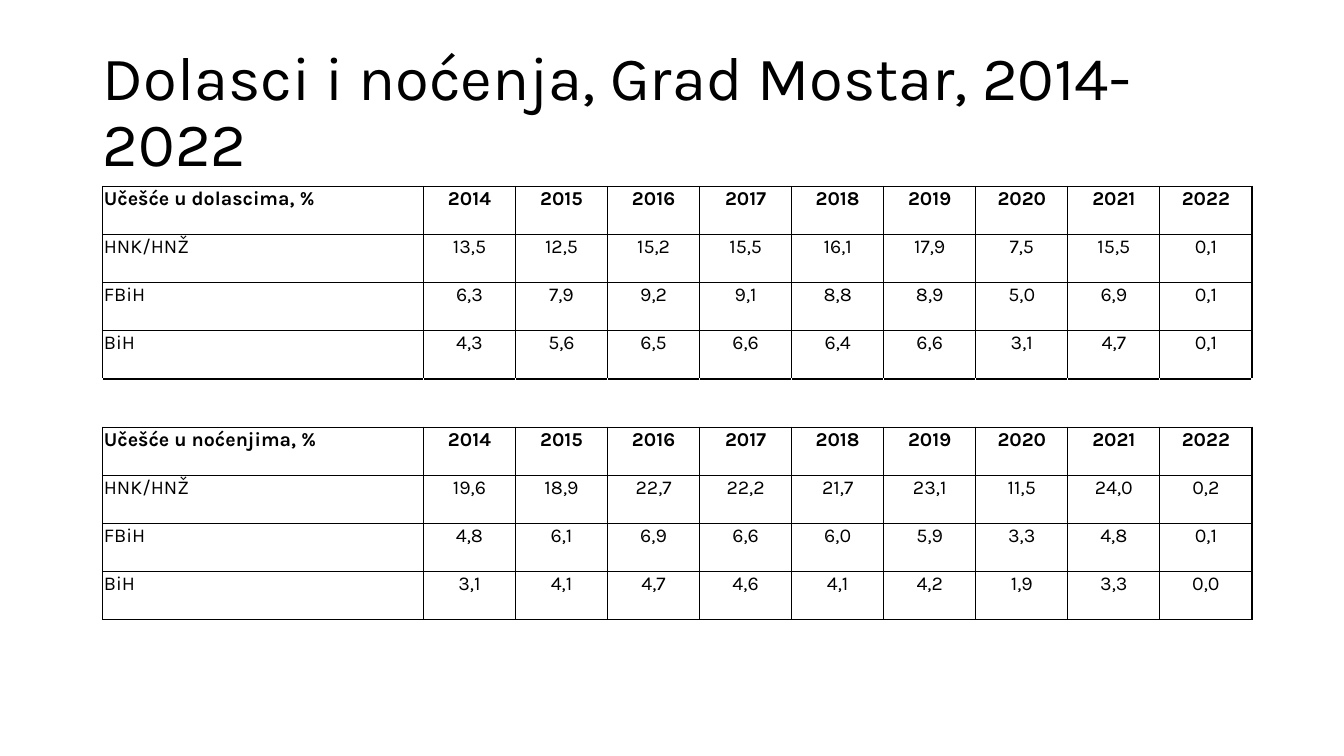
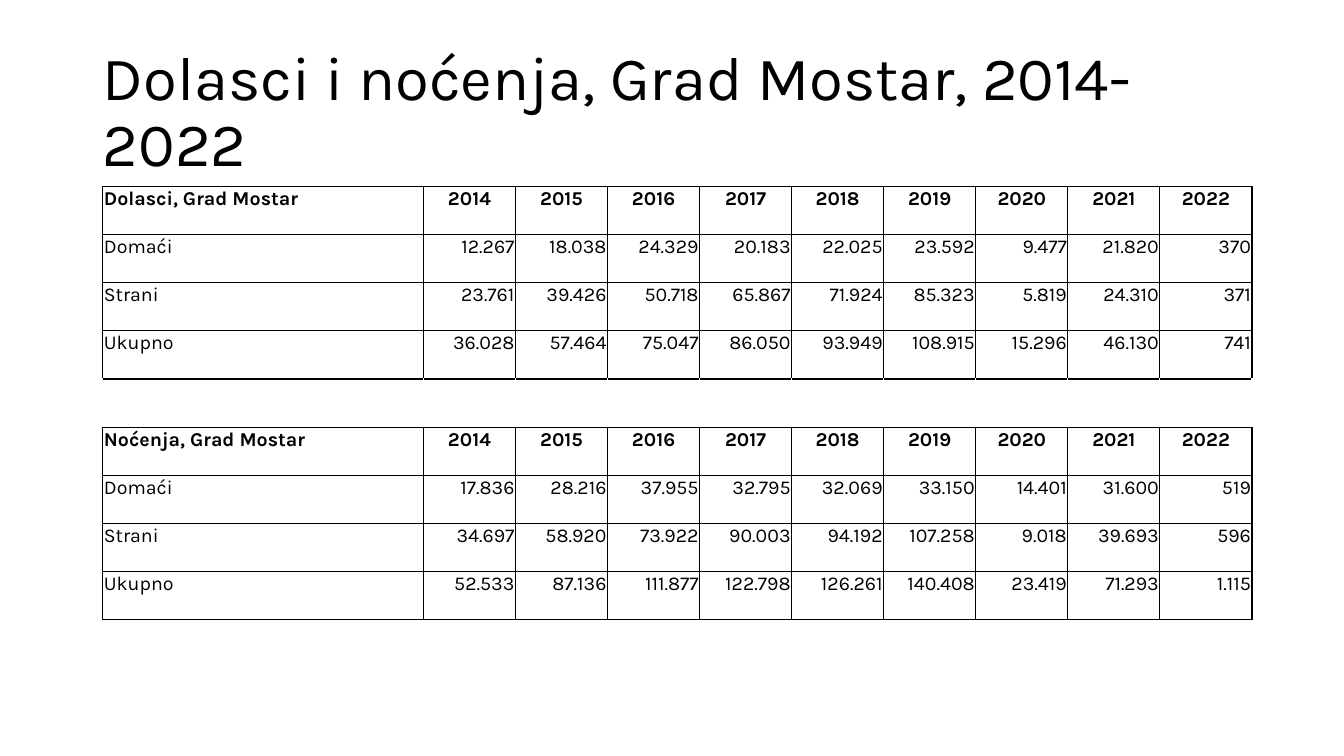
from lxml import etree
from pptx import Presentation
from pptx.dml.color import RGBColor
from pptx.enum.text import MSO_ANCHOR, MSO_AUTO_SIZE, PP_ALIGN
from pptx.oxml.ns import qn
from pptx.util import Inches, Pt

# Content: each slide has a number alignment and two blocks of (heading, rows)
TITLE = "Dolasci i noćenja, Grad Mostar, 2014-2022"
YEARS = [str(year) for year in range(2014, 2023)]
SLIDES = [
    (PP_ALIGN.CENTER, [
        ("Učešće u dolascima, %", [
            ("HNK/HNŽ", "13,5 12,5 15,2 15,5 16,1 17,9 7,5 15,5 0,1"),
            ("FBiH", "6,3 7,9 9,2 9,1 8,8 8,9 5,0 6,9 0,1"),
            ("BiH", "4,3 5,6 6,5 6,6 6,4 6,6 3,1 4,7 0,1"),
        ]),
        ("Učešće u noćenjima, %", [
            ("HNK/HNŽ", "19,6 18,9 22,7 22,2 21,7 23,1 11,5 24,0 0,2"),
            ("FBiH", "4,8 6,1 6,9 6,6 6,0 5,9 3,3 4,8 0,1"),
            ("BiH", "3,1 4,1 4,7 4,6 4,1 4,2 1,9 3,3 0,0"),
        ]),
    ]),
    (PP_ALIGN.RIGHT, [
        ("Dolasci, Grad Mostar", [
            ("Domaći", "12.267 18.038 24.329 20.183 22.025 23.592 9.477 21.820 370"),
            ("Strani", "23.761 39.426 50.718 65.867 71.924 85.323 5.819 24.310 371"),
            ("Ukupno", "36.028 57.464 75.047 86.050 93.949 108.915 15.296 46.130 741"),
        ]),
        ("Noćenja, Grad Mostar", [
            ("Domaći", "17.836 28.216 37.955 32.795 32.069 33.150 14.401 31.600 519"),
            ("Strani", "34.697 58.920 73.922 90.003 94.192 107.258 9.018 39.693 596"),
            ("Ukupno", "52.533 87.136 111.877 122.798 126.261 140.408 23.419 71.293 1.115"),
        ]),
    ]),
]

# Shared style
FONT, INK, PAPER = "Karla", "000000", "FFFFFF"
LEFT, TOP, WIDTH, HEIGHT = Inches(1.02), Inches(1.85), Inches(11.4), Inches(4.3)
LABEL = Inches(3.18)


def color(code):
    return RGBColor.from_string(code)


def style(par, size, bold, align):
    par.alignment = align
    for run in par.runs:
        run.font.name = FONT
        run.font.size = Pt(size)
        run.font.bold = bold
        run.font.color.rgb = color(INK)


def border(cell, sides):
    """Draw the four cell lines, which come before the fill."""
    props = cell._tc.get_or_add_tcPr()
    for spot, (side, code) in enumerate(sides.items()):
        line = etree.Element(qn("a:ln" + side), w=str(Pt(1)))
        fill = etree.SubElement(line, qn("a:solidFill"))
        etree.SubElement(fill, qn("a:srgbClr"), val=code)
        props.insert(spot, line)


def fill_cell(cell, text, bold, align):
    cell.margin_left = cell.margin_right = cell.margin_top = Inches(0.01)
    cell.margin_bottom = 0
    cell.text_frame.text = text
    style(cell.text_frame.paragraphs[0], 14, bold, align)


def add_title(slide):
    title = slide.shapes.title
    title.left, title.top = Inches(0.92), Inches(0.4)
    title.width, title.height = Inches(11.5), Inches(1.45)
    frame = title.text_frame
    frame.text = TITLE
    frame.word_wrap = True
    frame.auto_size = MSO_AUTO_SIZE.NONE
    frame.vertical_anchor = MSO_ANCHOR.MIDDLE
    frame.paragraphs[0].line_spacing = 0.9
    style(frame.paragraphs[0], 44, False, PP_ALIGN.LEFT)


def add_grid(slide, align, blocks):
    # Rows of both blocks, with None for the gap between them
    rows = []
    for head, lines in blocks:
        if rows:
            rows.append(None)
        rows.append((head, YEARS, True))
        rows += [(name, nums.split(), False) for name, nums in lines]

    count = len(YEARS) + 1
    table = slide.shapes.add_table(len(rows), count, LEFT, TOP, WIDTH, HEIGHT).table
    table.first_row = table.horz_banding = False
    for spot, col in enumerate(table.columns):
        col.width = LABEL if spot == 0 else (WIDTH - LABEL) // len(YEARS)
    for line, row in zip(table.rows, rows):
        line.height = HEIGHT // len(rows)
        edge = INK if row else PAPER
        for cell in line.cells:
            cell.fill.background()
            border(cell, {"L": edge, "R": edge, "T": INK, "B": INK})
        if row:
            name, nums, head = row
            first, *rest = line.cells
            fill_cell(first, name, head, PP_ALIGN.LEFT)
            for cell, num in zip(rest, nums):
                fill_cell(cell, num, head, PP_ALIGN.CENTER if head else align)


def main():
    deck = Presentation()
    deck.slide_width, deck.slide_height = Inches(13.33), Inches(7.5)
    for align, blocks in SLIDES:
        slide = deck.slides.add_slide(deck.slide_layouts[5])
        add_title(slide)
        add_grid(slide, align, blocks)
    deck.save("out.pptx")


if __name__ == "__main__":
    main()
